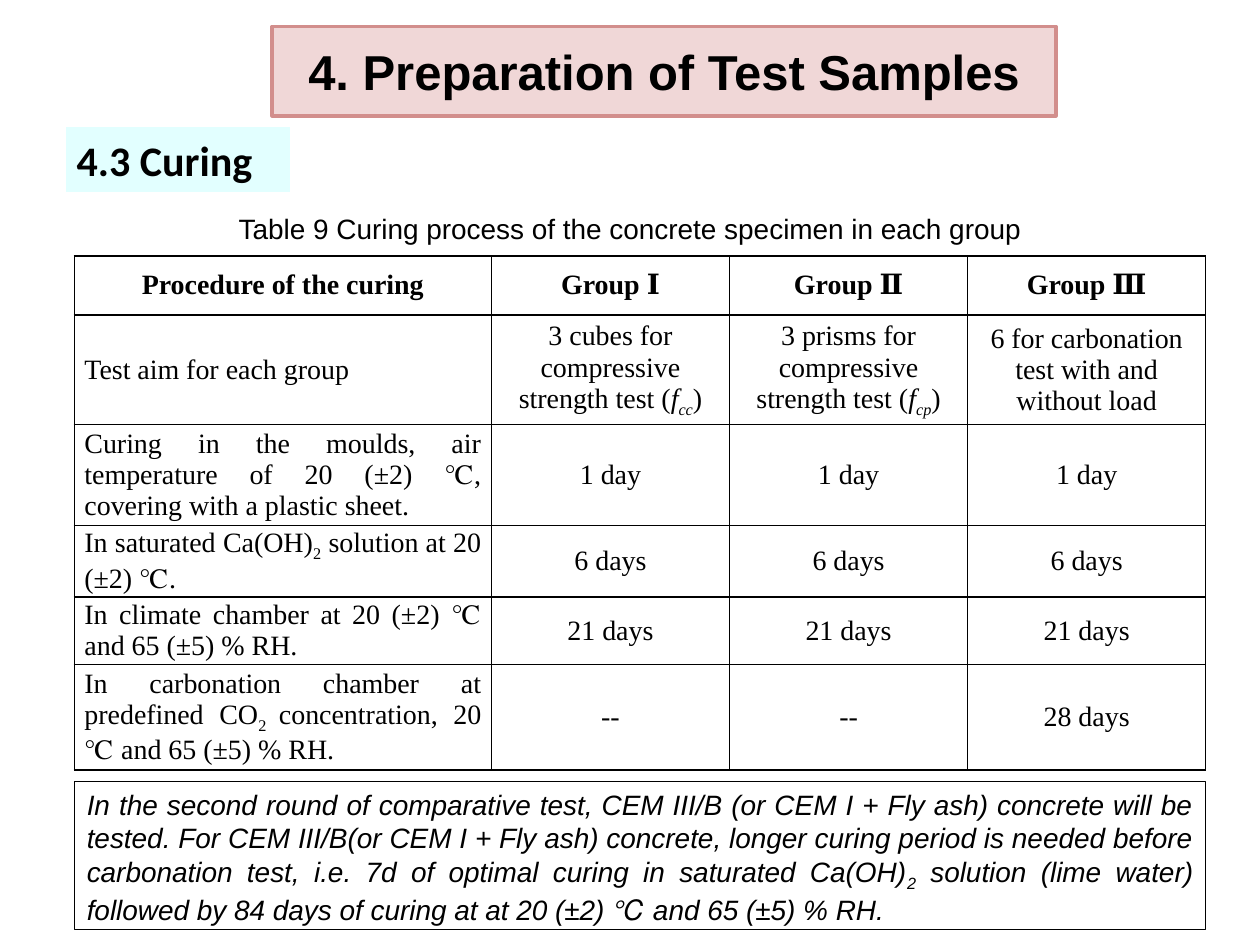
from lxml.etree import SubElement
from pptx import Presentation
from pptx.dml.color import RGBColor
from pptx.enum.shapes import MSO_SHAPE as SHAPE
from pptx.enum.text import MSO_ANCHOR as ANCHOR, MSO_AUTO_SIZE as AUTO, PP_ALIGN as ALIGN
from pptx.oxml.ns import qn
from pptx.util import Inches, Pt

THEME = {
    "ink": "000000", "title_fill": "E6B9B8", "title_line": "D28E8C",
    "head_fill": "CCFFFF", "head_line": "FFFFFF", "alpha": 56,
    "sans": "Arial", "head": "Calibri", "serif": "Times New Roman",
    "title_size": 28, "head_size": 24, "body_size": 16,
}

TITLE = [("4. Preparation of Test Samples", "b")]
HEADING = [("4.3 Curing", "b")]
CAPTION = [("Table 9 Curing process of the concrete specimen in each group", "")]
NOTE = [
    ("In the second round of comparative test, CEM III/B (or CEM I + Fly ash) concrete "
     "will be tested. For CEM III/B(or CEM I + Fly ash) concrete, longer curing period is "
     "needed before carbonation test, i.e. 7d of optimal curing in saturated Ca(OH)", "i"),
    ("2", "is"),
    (" solution (lime water) followed by 84 days of curing at at 20 (±2) ℃ "
     "and 65 (±5) % RH.", "i"),
]


def strength_aim(specimens, index):
    """Return the runs that name a strength test and its symbol."""
    return [(f"3 {specimens} for compressive strength test (", ""),
            ("f", "i"), (index, "is"), (")", "")]


ROWS = [
    ["Procedure of the curing", "Group Ⅰ", "Group Ⅱ", "Group Ⅲ"],
    ["Test aim for each group", strength_aim("cubes", "cc"), strength_aim("prisms", "cp"),
     "6 for carbonation test with and without load"],
    ["Curing in the moulds, air temperature of 20 (±2) ℃, covering with a plastic sheet.",
     "1 day", "1 day", "1 day"],
    [[("In saturated Ca(OH)", ""), ("2", "s"), (" solution at 20 (±2) ℃.", "")],
     "6 days", "6 days", "6 days"],
    ["In climate chamber at 20 (±2) ℃ and 65 (±5) % RH.", "21 days", "21 days", "21 days"],
    [[("In carbonation chamber at predefined CO", ""), ("2 ", "s"),
      ("concentration, 20 ℃ and 65 (±5) % RH.", "")], "--", "--", "28 days"],
]
COL_WIDTHS = [3.31, 1.89, 1.89, 1.89]
ROW_HEIGHTS = [0.47, 0.87, 0.79, 0.36, 0.5, 0.7]
LEFT, WIDTH = 0.59, 8.98


def color(name):
    """Return a theme colour."""
    return RGBColor.from_string(THEME[name])


def write(tf, runs, font, size, align):
    """Fill a text frame with one paragraph of styled runs."""
    p = tf.paragraphs[0]
    p.alignment = align
    for text, style in runs:
        r = p.add_run()
        r.text = text
        r.font.name, r.font.size = THEME[font], Pt(THEME[size])
        r.font.color.rgb = color("ink")
        r.font.bold, r.font.italic = "b" in style, "i" in style
        if "s" in style:
            r.font._element.set("baseline", "-25000")
    return p


def add_box(slide, box, line, weight, fill=None):
    """Add an outlined rectangle, tinted when a fill is named."""
    s = slide.shapes.add_shape(SHAPE.RECTANGLE, *map(Inches, box))
    s.shadow.inherit = False
    s.line.color.rgb, s.line.width = color(line), Pt(weight)
    if fill:
        s.fill.solid()
        s.fill.fore_color.rgb = color(fill)
        tint = s._element.spPr.find(qn("a:solidFill"))[0]
        SubElement(tint, qn("a:alpha")).set("val", str(THEME["alpha"] * 1000))
    else:
        s.fill.background()
    s.text_frame.word_wrap = True
    return s.text_frame


def add_borders(cell):
    """Draw thin lines on the four sides of a cell."""
    tc_pr = cell._tc.get_or_add_tcPr()
    for i, side in enumerate(("lnL", "lnR", "lnT", "lnB")):
        ln = tc_pr.makeelement(qn(f"a:{side}"), {"w": str(Pt(1))})
        fill = SubElement(ln, qn("a:solidFill"))
        SubElement(fill, qn("a:srgbClr")).set("val", THEME["ink"])
        tc_pr.insert(i, ln)


def add_curing_table(slide):
    """Add the table of curing steps by group."""
    frame = slide.shapes.add_table(len(ROWS), len(COL_WIDTHS), Inches(LEFT), Inches(2.03),
                                   Inches(WIDTH), Inches(4.01))
    table = frame.table
    for col, width in zip(table.columns, COL_WIDTHS):
        col.width = Inches(width)
    for row, height in zip(table.rows, ROW_HEIGHTS):
        row.height = Inches(height)
    for i, row in enumerate(ROWS):
        for j, content in enumerate(row):
            cell = table.cell(i, j)
            cell.fill.background()
            cell.vertical_anchor = ANCHOR.MIDDLE
            cell.margin_left = cell.margin_right = Inches(0.08)
            cell.margin_top = cell.margin_bottom = 0
            runs = [(content, "" if i else "b")] if isinstance(content, str) else content
            align = ALIGN.JUSTIFY if i and not j else ALIGN.CENTER
            write(cell.text_frame, runs, "serif", "body_size", align)
            add_borders(cell)
    frame.height = Inches(4.01)


def main():
    """Build the curing slide."""
    prs = Presentation()
    prs.slide_width, prs.slide_height = Inches(10), Inches(7.5)
    slide = prs.slides.add_slide(prs.slide_layouts[6])

    tf = slide.shapes.add_textbox(*map(Inches, (1.02, 1.63, 7.96, 0.37))).text_frame
    tf.word_wrap = True
    tf.auto_size = AUTO.SHAPE_TO_FIT_TEXT
    write(tf, CAPTION, "sans", "body_size", ALIGN.CENTER)

    add_curing_table(slide)

    tf = add_box(slide, (LEFT, 6.2, WIDTH, 1.18), "ink", 0.75)
    tf.vertical_anchor = ANCHOR.TOP
    tf.auto_size = AUTO.SHAPE_TO_FIT_TEXT
    write(tf, NOTE, "sans", "body_size", ALIGN.JUSTIFY).space_after = Pt(6)

    tf = add_box(slide, (0.51, 0.99, 1.81, 0.55), "head_line", 2, "head_fill")
    write(tf, HEADING, "head", "head_size", ALIGN.LEFT)
    tf = add_box(slide, (2.16, 0.21, 6.22, 0.71), "title_line", 2, "title_fill")
    write(tf, TITLE, "sans", "title_size", ALIGN.CENTER)

    prs.save("out.pptx")


if __name__ == "__main__":
    main()
